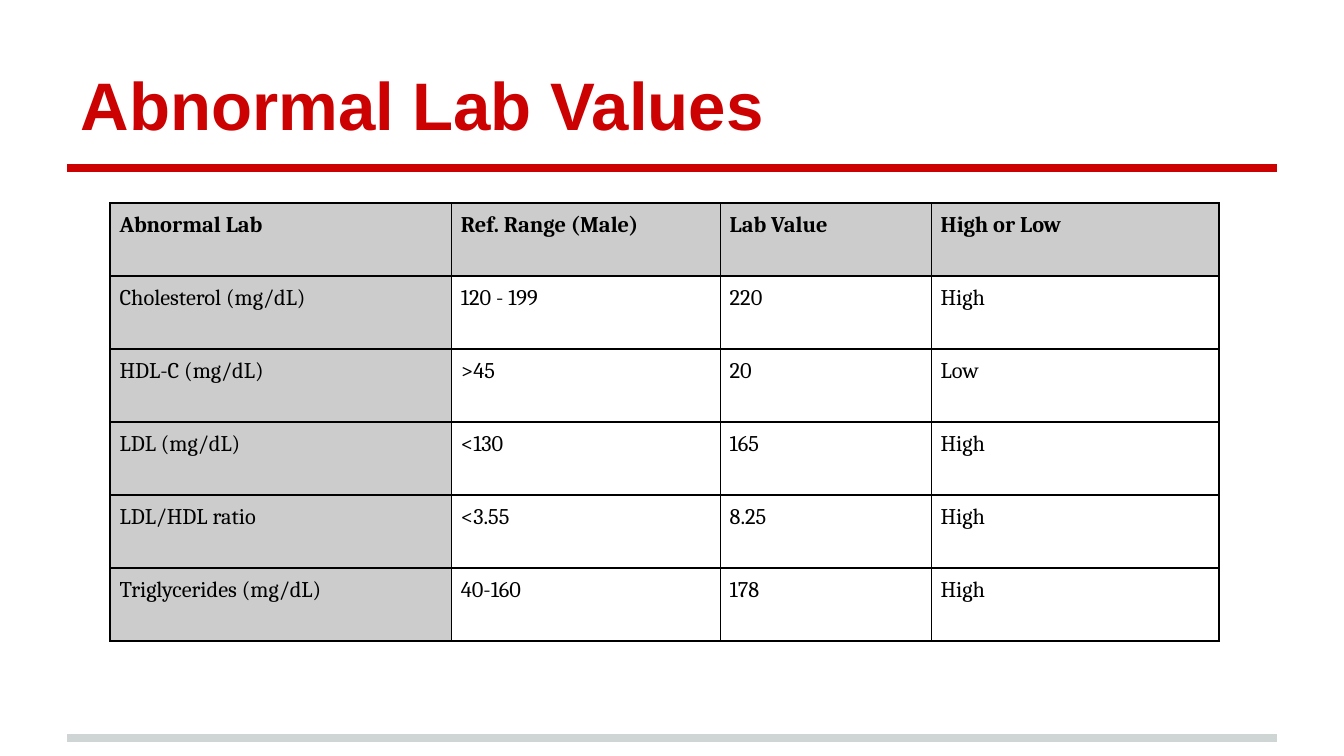
"""Build the slide with the table of abnormal lab values."""
from lxml import etree
from pptx import Presentation
from pptx import util as u
from pptx.dml.color import RGBColor
from pptx.enum import shapes, text
from pptx.oxml import ns

COLORS = {"red": "CC0202", "rule": "CFD4D4", "header": "CCCCCC",
          "cell": "FFFFFF", "ink": "000000"}
COLUMN_WIDTHS = [2.54, 2, 1.57, 2.14]
TABLE_HEIGHT = 3.26
LAB_ROWS = [
    ["Abnormal Lab", "Ref. Range (Male)", "Lab Value", "High or Low"],
    ["Cholesterol (mg/dL)", "120 - 199", "220", "High"],
    ["HDL-C (mg/dL)", ">45", "20", "Low"],
    ["LDL (mg/dL)", "<130", "165", "High"],
    ["LDL/HDL ratio", "<3.55", "8.25", "High"],
    ["Triglycerides (mg/dL)", "40-160", "178", "High"],
]


def color(name):
    return RGBColor.from_string(COLORS[name])


def set_margins(target, inches):
    target.margin_left = target.margin_right = u.Inches(inches)
    target.margin_top = target.margin_bottom = u.Inches(inches)


def format_text(paragraph, font_name, size, color_name, bold):
    paragraph.alignment = text.PP_ALIGN.LEFT
    for run in paragraph.runs:
        run.font.name = font_name
        run.font.size = u.Pt(size)
        run.font.bold = bold
        run.font.color.rgb = color(color_name)


def add_rule(slide, top, color_name):
    rule = slide.shapes.add_connector(
        shapes.MSO_CONNECTOR.STRAIGHT,
        u.Inches(0.5), u.Inches(top), u.Inches(9.5), u.Inches(top))
    rule.line.color.rgb = color(color_name)
    rule.line.width = u.Pt(4)
    etree.SubElement(rule._element.spPr, ns.qn("a:effectLst"))


def add_title(slide, title_text):
    title = slide.shapes.title
    title.left, title.top = u.Inches(0.5), u.Inches(0.23)
    title.width, title.height = u.Inches(9), u.Inches(0.94)
    frame = title.text_frame
    frame.text = title_text
    frame.word_wrap = True
    frame.auto_size = text.MSO_AUTO_SIZE.NONE
    frame.vertical_anchor = text.MSO_ANCHOR.BOTTOM
    set_margins(frame, 0.1)
    format_text(frame.paragraphs[0], "Arial", 36, "red", True)


def add_borders(cell):
    properties = cell._tc.get_or_add_tcPr()
    for side in ("lnL", "lnR", "lnT", "lnB"):
        border = etree.SubElement(properties, ns.qn(f"a:{side}"), w=str(u.Pt(1)))
        fill = etree.SubElement(border, ns.qn("a:solidFill"))
        etree.SubElement(fill, ns.qn("a:srgbClr"), val=COLORS["ink"])


def fill_cell(cell, value, is_header, is_shaded):
    cell.text_frame.text = value
    set_margins(cell, 0.07)
    format_text(cell.text_frame.paragraphs[0], "Cambria", 12, "ink", is_header)
    add_borders(cell)
    if is_shaded:
        cell.fill.solid()
        cell.fill.fore_color.rgb = color("header")
    else:
        cell.fill.background()


def add_lab_table(slide):
    frame = slide.shapes.add_table(
        len(LAB_ROWS), len(COLUMN_WIDTHS), u.Inches(0.82), u.Inches(1.51),
        u.Inches(sum(COLUMN_WIDTHS)), u.Inches(TABLE_HEIGHT))
    table = frame.table
    for column, width in zip(table.columns, COLUMN_WIDTHS):
        column.width = u.Inches(width)
    for row_index, values in enumerate(LAB_ROWS):
        for column_index, value in enumerate(values):
            is_header = row_index == 0
            fill_cell(table.cell(row_index, column_index), value,
                      is_header, is_header or column_index == 0)


def main():
    presentation = Presentation()
    presentation.slide_width = u.Inches(10)
    presentation.slide_height = u.Inches(10 * 9 / 16)
    slide = presentation.slides.add_slide(presentation.slide_layouts[5])
    add_rule(slide, 5.49, "rule")
    add_rule(slide, 1.25, "red")
    add_title(slide, "Abnormal Lab Values")
    add_lab_table(slide)
    presentation.save("out.pptx")


if __name__ == "__main__":
    main()
